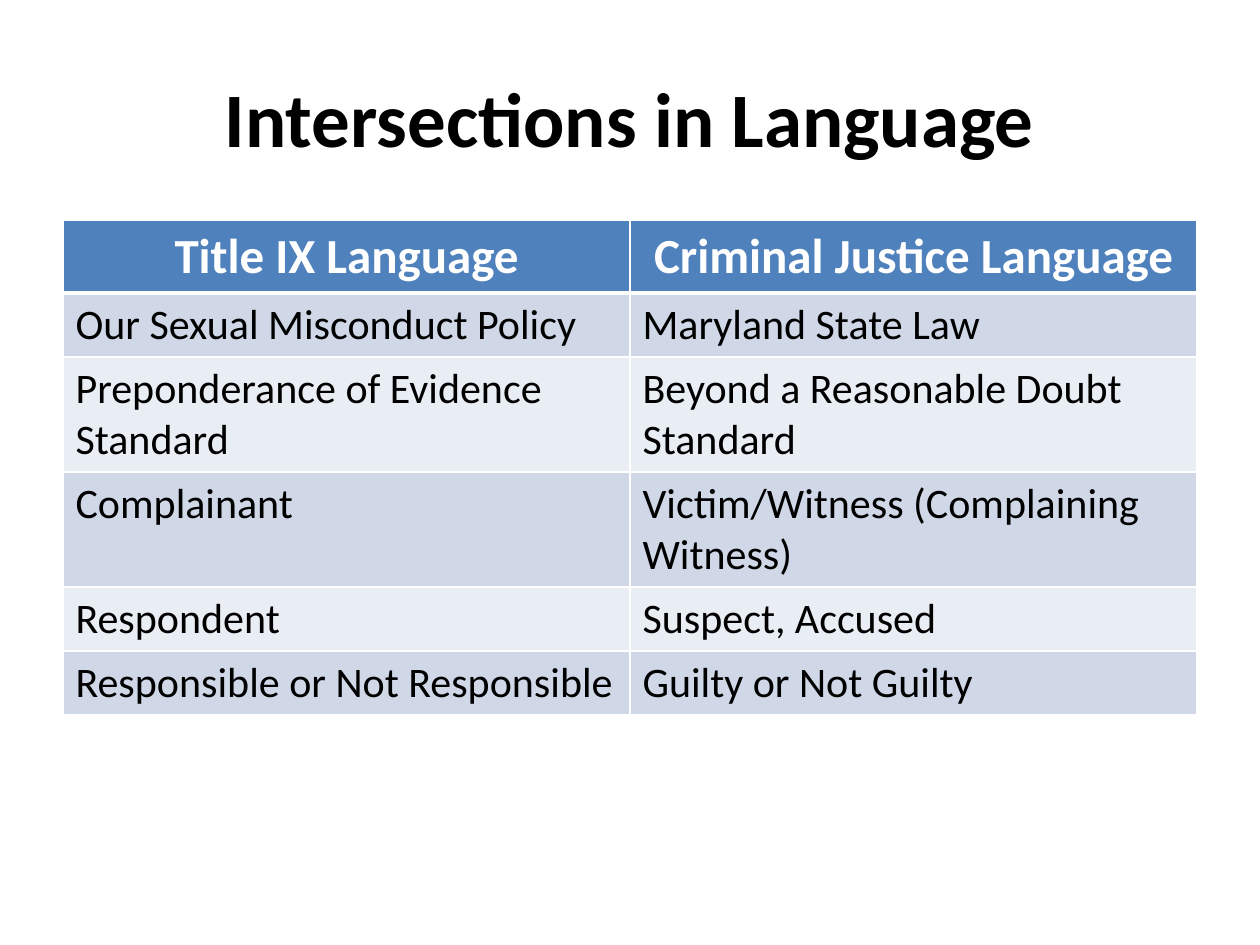
from lxml.etree import SubElement
from pptx import Presentation
from pptx.dml.color import RGBColor
from pptx.enum.text import MSO_ANCHOR as Anchor, PP_ALIGN as Align
from pptx.oxml.ns import qn
from pptx.util import Inches, Pt

FONT = "Calibri"
WHITE, BLACK = "FFFFFF", "000000"
HEADER_FILL = "4F81BD"
BAND_FILLS = ["D0D8E8", "E9EDF4"]
TERMS = [
    ("Title IX Language", "Criminal Justice Language"),
    ("Our Sexual Misconduct Policy", "Maryland State Law"),
    ("Preponderance of Evidence Standard", "Beyond a Reasonable Doubt Standard"),
    ("Complainant", "Victim/Witness (Complaining Witness)"),
    ("Respondent", "Suspect, Accused"),
    ("Responsible or Not Responsible", "Guilty or Not Guilty"),
]


def color(value):
    return RGBColor.from_string(value)


def style_paragraph(para, size, hex_color, bold, align):
    para.alignment = align
    para.font.name = FONT
    para.font.size = Pt(size)
    para.font.bold = bold
    para.font.color.rgb = color(hex_color)


def set_borders(cell, top, bottom):
    properties = cell._tc.get_or_add_tcPr()
    widths = {"a:lnL": 1, "a:lnR": 1, "a:lnT": top, "a:lnB": bottom}
    for tag, width in widths.items():
        line = SubElement(properties, qn(tag), w=str(Pt(width)))
        fill = SubElement(line, qn("a:solidFill"))
        SubElement(fill, qn("a:srgbClr"), val=WHITE)


def place_title(page, left, top, width, height):
    title = page.shapes.title
    title.left, title.top, title.width, title.height = left, top, width, height
    title.text_frame.text = "Intersections in Language"
    title.text_frame.vertical_anchor = Anchor.MIDDLE
    style_paragraph(title.text_frame.paragraphs[0], 44, BLACK, True, Align.CENTER)


def place_terms_table(page, left, top, width, height):
    table = page.shapes.add_table(len(TERMS), 2, left, top, width, height).table
    for row, terms in enumerate(TERMS):
        is_header = row == 0
        for column, term in enumerate(terms):
            cell = table.cell(row, column)
            cell.text = term
            set_borders(cell, 3 if row == 1 else 1, 3 if is_header else 1)
            cell.fill.solid()
            fill = HEADER_FILL if is_header else BAND_FILLS[(row - 1) % 2]
            cell.fill.fore_color.rgb = color(fill)
            para = cell.text_frame.paragraphs[0]
            if is_header:
                style_paragraph(para, 28, WHITE, True, Align.CENTER)
            else:
                style_paragraph(para, 24, BLACK, False, Align.LEFT)


def main():
    deck = Presentation()
    deck.slide_width, deck.slide_height = Inches(10), Inches(7.5)
    page = deck.slides.add_slide(deck.slide_layouts[5])
    place_title(page, Inches(0.5), Inches(0.3), Inches(9), Inches(1.25))
    place_terms_table(page, Inches(0.5), Inches(1.75), Inches(9), Inches(0.41 * len(TERMS)))
    deck.save("out.pptx")


if __name__ == "__main__":
    main()
